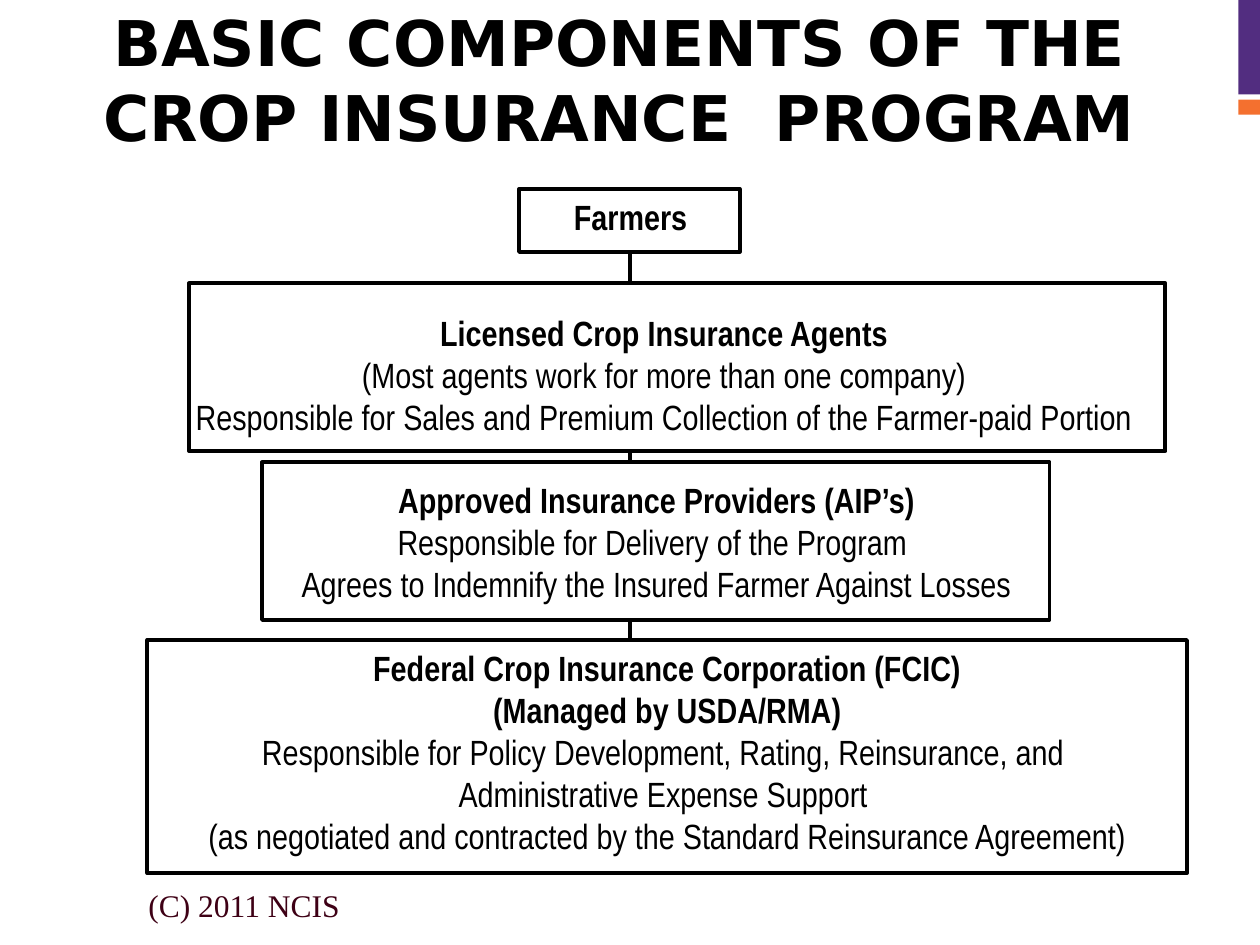
import pptx
import pptx.util
import pptx.dml.color
import pptx.enum.shapes
import pptx.enum.text
import pptx.oxml.ns
import lxml.etree

COLORS = {
    "paper": "FFFFFF",
    "ink": "000000",
    "purple": "522D80",
    "orange": "F4702F",
    "maroon": "3E0015",
}
SLIDE_WIDTH, SLIDE_HEIGHT = 10, 7.5
COLUMNS, ROWS = 120, 90
OUTLINE = pptx.util.Pt(2.25)
LABEL_FONT = "Arial Narrow"
CENTER = pptx.enum.text.PP_ALIGN.CENTER
LEFT = pptx.enum.text.PP_ALIGN.LEFT


def col(count):
    return pptx.util.Inches(round(SLIDE_WIDTH * count / COLUMNS, 2))


def row(count):
    return pptx.util.Inches(round(SLIDE_HEIGHT * count / ROWS, 2))


def place(cells):
    """Turn (column, row, columns wide, rows high) into lengths."""
    left, top, width, height = cells
    return col(left), row(top), col(width), row(height)


def rgb(name):
    return pptx.dml.color.RGBColor.from_string(COLORS[name])


def add_box(slide, cells, fill="paper", outlined=False):
    box = slide.shapes.add_shape(
        pptx.enum.shapes.MSO_SHAPE.RECTANGLE, *place(cells))
    box.shadow.inherit = False
    box.fill.solid()
    box.fill.fore_color.rgb = rgb(fill)
    if outlined:
        box.line.color.rgb = rgb("ink")
        box.line.width = OUTLINE
    else:
        box.line.fill.background()
    return box


def write(shape, lines, bold_lines=0, size=20, font=LABEL_FONT, color="ink",
          align=CENTER, anchor=pptx.enum.text.MSO_ANCHOR.TOP):
    """Fill a shape with lines, the first bold_lines of them in bold."""
    frame = shape.text_frame
    frame.word_wrap = True
    frame.vertical_anchor = anchor
    frame.text = "\n".join(lines)
    for number, paragraph in enumerate(frame.paragraphs):
        paragraph.alignment = align
        for run in paragraph.runs:
            run.font.name = font
            run.font.size = pptx.util.Pt(size)
            run.font.bold = number < bold_lines
            run.font.color.rgb = rgb(color)


def add_text(slide, cells, lines, **style):
    write(slide.shapes.add_textbox(*place(cells)), lines, **style)


def add_trunk(slide, column, top, bottom):
    """Draw the vertical line that joins all levels."""
    trunk = slide.shapes.add_connector(
        pptx.enum.shapes.MSO_CONNECTOR.STRAIGHT,
        col(column), row(top), col(column), row(bottom))
    trunk.line.color.rgb = rgb("ink")
    trunk.line.width = OUTLINE
    lxml.etree.SubElement(trunk._element.spPr, pptx.oxml.ns.qn("a:effectLst"))


def add_title(slide):
    title = add_box(slide, (0, 0, 118, 15))
    write(title, ["BASIC COMPONENTS OF THE CROP INSURANCE  PROGRAM"],
          bold_lines=1, size=36, font="DejaVu Sans",
          anchor=pptx.enum.text.MSO_ANCHOR.MIDDLE)


def add_levels(slide):
    add_trunk(slide, COLUMNS / 2, 23, 75)

    add_box(slide, (49.5, 18, 21, 6), outlined=True)
    add_text(slide, (50, 18, 20, 4), ["Farmers"], bold_lines=1)

    add_box(slide, (18, 27, 93, 16), outlined=True)
    add_text(slide, (16, 29, 94.5, 13.2), [
        "Licensed Crop Insurance Agents",
        "(Most agents work for more than one company)",
        "Responsible for Sales and Premium Collection of the Farmer-paid Portion",
    ], bold_lines=1)

    add_box(slide, (25, 44, 75, 15), outlined=True)
    providers = add_box(slide, (26, 45, 73, 13.2))
    write(providers, [
        "Approved Insurance Providers (AIP’s)",
        "Responsible for Delivery of the Program ",
        "Agrees to Indemnify the Insured Farmer Against Losses",
    ], bold_lines=1)

    corporation = add_box(slide, (14, 61, 99, 22.2), outlined=True)
    write(corporation, [
        "Federal Crop Insurance Corporation (FCIC)",
        "(Managed by USDA/RMA)",
        "Responsible for Policy Development, Rating, Reinsurance, and ",
        "Administrative Expense Support ",
        "(as negotiated and contracted by the Standard Reinsurance Agreement)",
    ], bold_lines=2)


def main():
    deck = pptx.Presentation()
    deck.slide_width = col(COLUMNS)
    deck.slide_height = row(ROWS)
    slide = deck.slides.add_slide(deck.slide_layouts[6])

    add_box(slide, (0, 0, COLUMNS, 9), fill="purple")
    add_box(slide, (0, 9.5, COLUMNS, 1.5), fill="orange")
    add_title(slide)
    add_levels(slide)
    add_text(slide, (13, 83.75, 38, 6.25), ["(C) 2011 NCIS"], size=18,
             font="Times New Roman", color="maroon", align=LEFT)

    deck.save("out.pptx")


if __name__ == "__main__":
    main()
